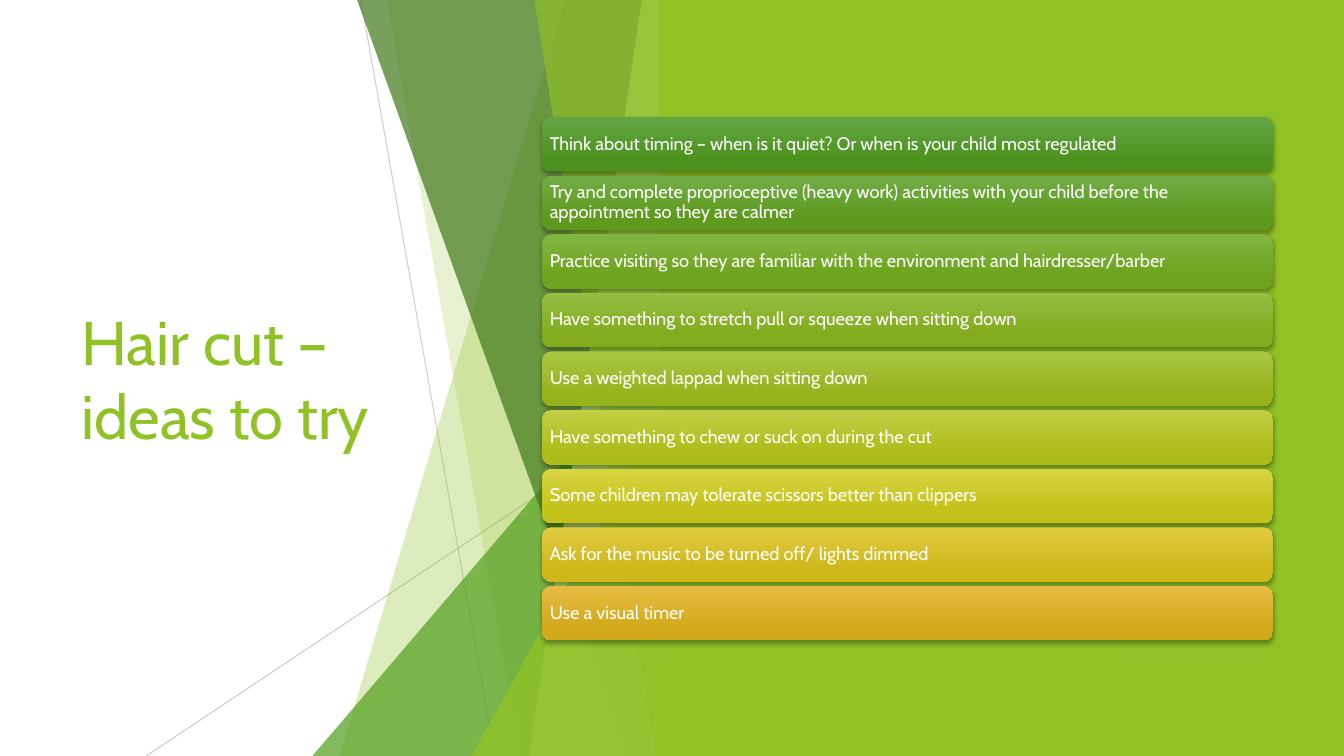
"""Build the slide of hair cut ideas: title, faceted backdrop and nine gradient bars."""
from dataclasses import dataclass

from lxml import etree
from pptx import Presentation
from pptx.dml.color import RGBColor
from pptx.enum import shapes, text
from pptx.oxml.ns import qn
from pptx.util import Pt

COLOURS = {
    "lime": "90C226",
    "green": "54A021",
    "forest": "3F7819",
    "pale": "C0E474",
    "grey": "BFBFBF",
    "white": "FFFFFF",
    "black": "000000",
}
FONT = "Cabin"
SLIDE_WIDTH, SLIDE_HEIGHT = 960, 540
FACET_TOP, FACET_RIGHT = -0.6, 479.5
BAR_LEFT, BAR_TOP, BAR_WIDTH, BAR_HEIGHT, BAR_PITCH = 387.2, 83.6, 522, 38.9, 41.87


@dataclass(frozen=True)
class Ray:
    start: tuple[float, float]
    end: tuple[float, float]
    opacity: int


@dataclass(frozen=True)
class Facet:
    top_left: float
    bottom_left: float
    colour: str
    opacity: int


@dataclass(frozen=True)
class Wedge:
    left: float
    top: float
    colour: str
    opacity: int


@dataclass(frozen=True)
class Tip:
    wording: str
    light: str
    dark: str


RAYS = [Ray((257.8, 0), (353.5, 540), 75), Ray((479.5, 290.2), (104.4, 540), 80)]
BACKDROP = [
    Facet(403.9, 242.6, "lime", 30),
    Facet(276.2, 371.8, "lime", 20),
    Wedge(223.2, 239.8, "green", 72),
    Facet(254.9, 449.3, "forest", 70),
    Facet(458.6, 378, "pale", 70),
    Facet(381.6, 468.7, "lime", 65),
    Wedge(336.8, 283, "lime", 80),
]
TIPS = [
    Tip("Think about timing – when is it quiet? Or when is your child most regulated", "63A545", "4D921E"),
    Tip("Try and complete proprioceptive (heavy work) activities with your child before the "
        "appointment so they are calmer", "71AD44", "5D9A1E"),
    Tip("Practice visiting so they are familiar with the environment and hairdresser/barber", "82B644", "6EA31D"),
    Tip("Have something to stretch pull or squeeze when sitting down", "95BE44", "82AB1D"),
    Tip("Use a weighted lappad when sitting down", "AAC744", "97B31C"),
    Tip("Have something to chew or suck on during the cut", "C2CF43", "AEBC1B"),
    Tip("Some children may tolerate scissors better than clippers", "D8D543", "C4C11A"),
    Tip("Ask for the music to be turned off/ lights dimmed", "E2CB43", "CDB719"),
    Tip("Use a visual timer", "E7BC43", "D2A91B"),
]


def colour_of(name: str) -> RGBColor:
    return RGBColor.from_string(COLOURS[name])


def set_opacity(shape, percent: int) -> None:
    for colour in shape.element.spPr.iter(qn("a:srgbClr")):
        etree.SubElement(colour, qn("a:alpha"), val=str(percent * 1000))


def fill_flat(shape, colour: str, opacity: int = 100) -> None:
    shape.shadow.inherit = False
    shape.fill.solid()
    shape.fill.fore_color.rgb = colour_of(colour)
    shape.line.fill.background()
    if opacity < 100:
        set_opacity(shape, opacity)


def write(shape, wording: str, *, size: float, colour: str, inset: tuple[float, float], spacing: float = 1.0) -> None:
    frame = shape.text_frame
    frame.word_wrap = True
    frame.vertical_anchor = text.MSO_ANCHOR.MIDDLE
    frame.margin_left = frame.margin_right = Pt(inset[0])
    frame.margin_top = frame.margin_bottom = Pt(inset[1])
    paragraph = frame.paragraphs[0]
    paragraph.alignment = text.PP_ALIGN.LEFT
    paragraph.line_spacing = spacing
    run = paragraph.add_run()
    run.text = wording
    run.font.name = FONT
    run.font.size = Pt(size)
    run.font.color.rgb = colour_of(colour)


def draw_ray(slide, ray: Ray) -> None:
    line = slide.shapes.add_connector(
        shapes.MSO_CONNECTOR.STRAIGHT, *map(Pt, ray.start + ray.end))
    line.line.color.rgb = colour_of("grey")
    line.line.width = Pt(0.75)
    set_opacity(line, ray.opacity)
    etree.SubElement(line.element.spPr, qn("a:effectLst"))


def draw_facet(slide, facet: Facet) -> None:
    builder = slide.shapes.build_freeform(Pt(facet.top_left), Pt(FACET_TOP))
    corners = [(FACET_RIGHT, FACET_TOP), (FACET_RIGHT, SLIDE_HEIGHT), (facet.bottom_left, SLIDE_HEIGHT)]
    builder.add_line_segments([(Pt(x), Pt(y)) for x, y in corners], close=True)
    fill_flat(builder.convert_to_shape(), facet.colour, facet.opacity)


def draw_wedge(slide, wedge: Wedge) -> None:
    shape = slide.shapes.add_shape(
        shapes.MSO_SHAPE.ISOSCELES_TRIANGLE, Pt(wedge.left), Pt(wedge.top),
        Pt(FACET_RIGHT - wedge.left), Pt(SLIDE_HEIGHT - wedge.top))
    shape.adjustments[0] = 1
    fill_flat(shape, wedge.colour, wedge.opacity)


def draw_tip(slide, tip: Tip, top: float) -> None:
    bar = slide.shapes.add_shape(
        shapes.MSO_SHAPE.ROUNDED_RECTANGLE, Pt(BAR_LEFT), Pt(top), Pt(BAR_WIDTH), Pt(BAR_HEIGHT))
    bar.line.fill.background()
    bar.fill.gradient()
    bar.fill.gradient_angle = 270
    for stop, position, shade in zip(bar.fill.gradient_stops, (0, 0.78), (tip.light, tip.dark)):
        stop.position = position
        stop.color.rgb = RGBColor.from_string(shade)
    bar.shadow.inherit = False
    effects = bar.element.spPr.find(qn("a:effectLst"))
    shadow = etree.SubElement(
        effects, qn("a:outerShdw"), blurRad=str(Pt(3)), dist=str(Pt(2)), dir="5400000", rotWithShape="0")
    tint = etree.SubElement(shadow, qn("a:srgbClr"), val=COLOURS["black"])
    etree.SubElement(tint, qn("a:alpha"), val="35000")
    write(bar, tip.wording, size=13, colour="white", inset=(3.6, 3.6), spacing=0.9)


def main() -> None:
    presentation = Presentation()
    presentation.slide_width, presentation.slide_height = Pt(SLIDE_WIDTH), Pt(SLIDE_HEIGHT)
    slide = presentation.slides.add_slide(presentation.slide_layouts[6])

    title = slide.shapes.add_textbox(Pt(51.1), Pt(108.7), Pt(279.4), Pt(322.6))
    write(title, "Hair cut – ideas to try", size=44, colour="lime", inset=(7.2, 3.6))

    for ray in RAYS:
        draw_ray(slide, ray)
    for piece in BACKDROP:
        if isinstance(piece, Facet):
            draw_facet(slide, piece)
        else:
            draw_wedge(slide, piece)

    panel_left = 470.6
    panel = slide.shapes.add_shape(
        shapes.MSO_SHAPE.RECTANGLE, Pt(panel_left), Pt(0), Pt(SLIDE_WIDTH - panel_left), Pt(SLIDE_HEIGHT))
    fill_flat(panel, "lime")

    for row, tip in enumerate(TIPS):
        draw_tip(slide, tip, BAR_TOP + row * BAR_PITCH)

    presentation.save("out.pptx")


if __name__ == "__main__":
    main()
